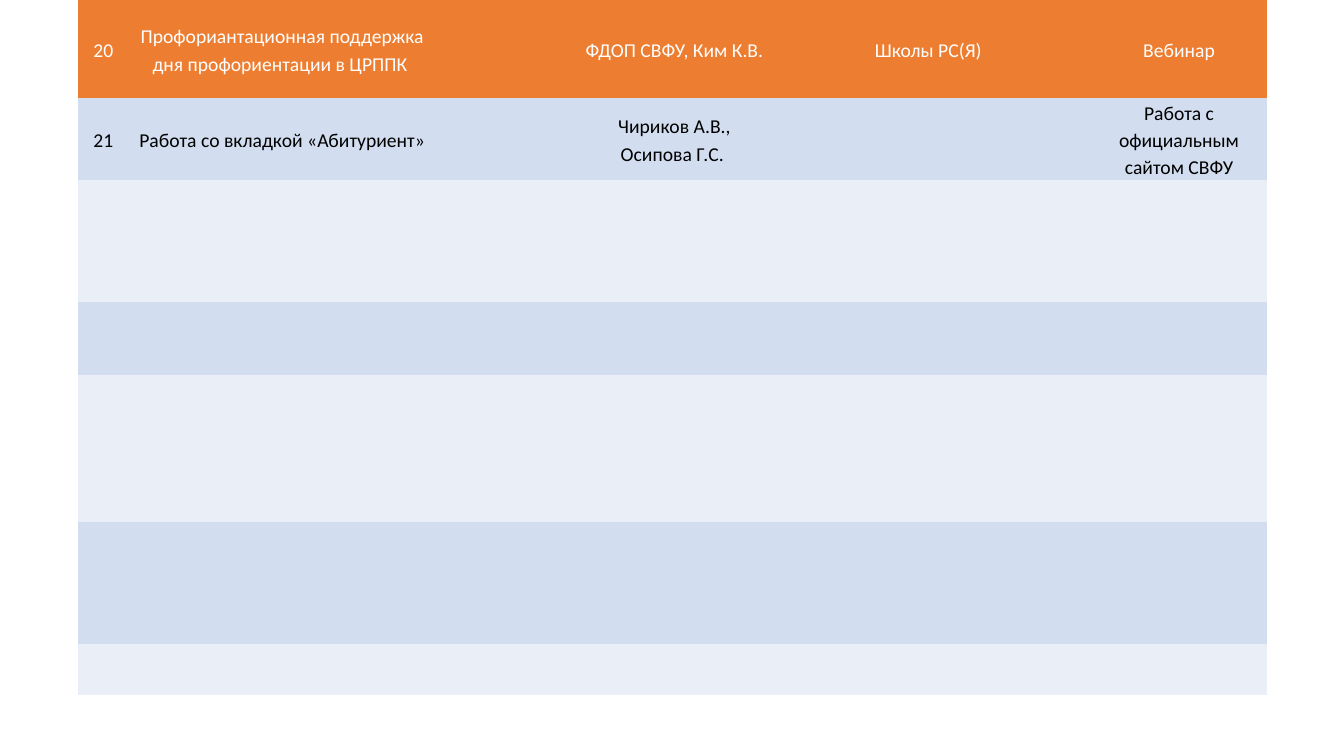
from dataclasses import dataclass

from pptx import Presentation
from pptx.dml.color import RGBColor
from pptx.enum.text import MSO_ANCHOR, PP_ALIGN
from pptx.oxml.ns import qn
from pptx.util import Inches, Pt


@dataclass(frozen=True)
class Theme:
    font: str = "Calibri"
    size: float = 14
    line_spacing: float = 1.15
    accent: str = "ED7D31"
    bands: tuple = ("D2DEEF", "EAEFF7")
    light_text: str = "FFFFFF"
    dark_text: str = "000000"


THEME = Theme()
PLAIN_TABLE_STYLE = "{2D5ABB26-0587-4C30-8999-92F81FD0307C}"
COLUMN_WIDTHS = (0.51, 3.04, 1.42, 1.9, 3.18, 1.75)
ROW_HEIGHTS = (0.97, 0.51, 1.21, 0.72, 1.46, 1.21, 0.51)
EVENTS = (
    ("20", "Профориантационная поддержка дня профориентации в ЦРППК ", "",
     "ФДОП СВФУ, Ким К.В. ", "Школы РС(Я) ", "Вебинар"),
    ("21", "Работа со вкладкой «Абитуриент»", "",
     "Чириков А.В., Осипова Г.С. ", "", "Работа с официальным сайтом СВФУ"),
)


def write_cell(cell, text, *, color, size=THEME.size, font=THEME.font):
    cell.vertical_anchor = MSO_ANCHOR.MIDDLE
    cell.margin_left = cell.margin_right = Inches(0.05)
    cell.margin_top = cell.margin_bottom = 0
    para = cell.text_frame.paragraphs[0]
    para.alignment = PP_ALIGN.CENTER
    para.line_spacing = THEME.line_spacing
    span = para.add_run()
    span.text = text
    span.font.name = font
    span.font.size = Pt(size)
    span.font.color.rgb = RGBColor.from_string(color)


def add_event_table(page, left, top, width, height):
    frame = page.shapes.add_table(
        len(ROW_HEIGHTS), len(COLUMN_WIDTHS),
        Inches(left), Inches(top), Inches(width), Inches(height),
    )
    table = frame.table
    table.first_row = False
    table.horz_banding = False
    next(frame.element.iter(qn("a:tableStyleId"))).text = PLAIN_TABLE_STYLE
    for column, share in zip(table.columns, COLUMN_WIDTHS):
        column.width = Inches(width * share / sum(COLUMN_WIDTHS))
    for index, (row, share) in enumerate(zip(table.rows, ROW_HEIGHTS)):
        row.height = Inches(height * share / sum(ROW_HEIGHTS))
        fill = THEME.bands[(index - 1) % 2] if index else THEME.accent
        color = THEME.dark_text if index else THEME.light_text
        texts = EVENTS[index] if index < len(EVENTS) else [""] * len(COLUMN_WIDTHS)
        for cell, text in zip(row.cells, texts):
            cell.fill.solid()
            cell.fill.fore_color.rgb = RGBColor.from_string(fill)
            if text:
                write_cell(cell, text, color=color)


def main():
    deck = Presentation()
    deck.slide_width = Inches(13.33)
    deck.slide_height = Inches(7.5)
    page = deck.slides.add_slide(deck.slide_layouts[6])
    add_event_table(page, 0.77, 0, sum(COLUMN_WIDTHS), sum(ROW_HEIGHTS))
    deck.save("out.pptx")


if __name__ == "__main__":
    main()
